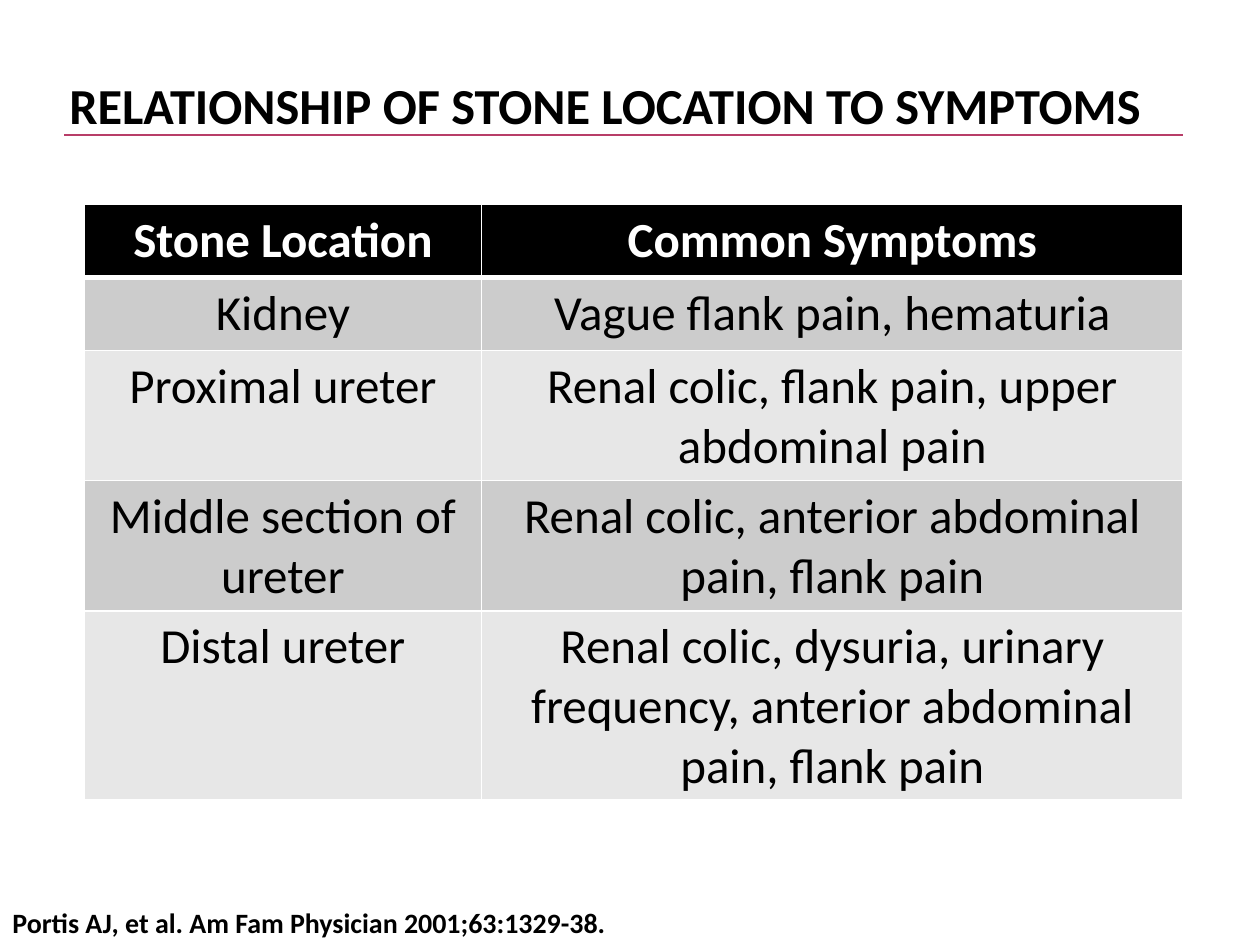
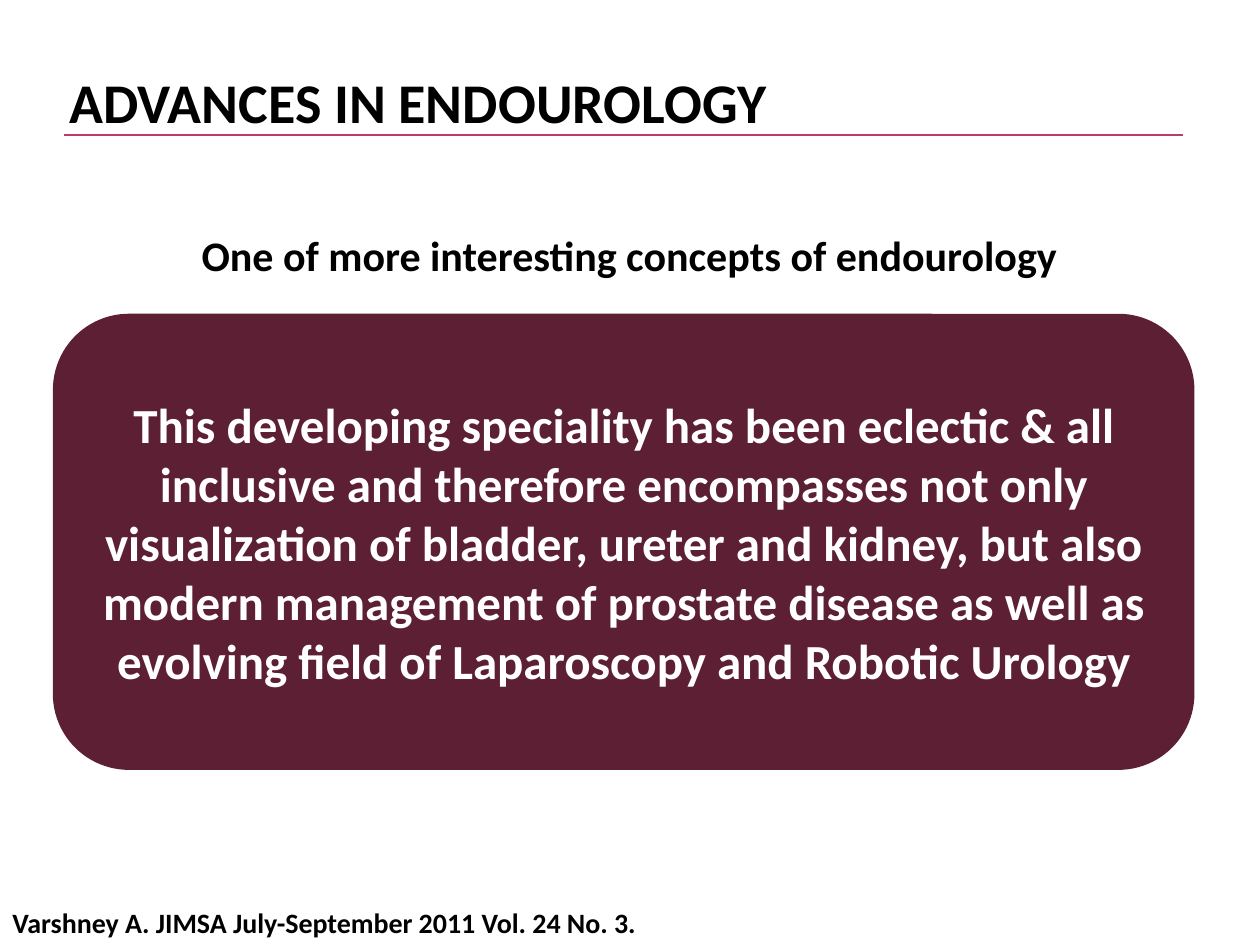
from lxml import etree
from pptx import Presentation
from pptx.dml.color import RGBColor
from pptx.enum import shapes, text
from pptx.oxml import ns
from pptx.util import Emu, Inches, Pt

FONT = "Calibri"
COLORS = {
    "ink": "000000",
    "paper": "FFFFFF",
    "rule": "B83D68",
    "panel": "5C1F34",
    "odd_row": "CCCCCC",
    "even_row": "E7E7E7",
}

SYMPTOMS = {
    "title": "RELATIONSHIP OF STONE LOCATION TO SYMPTOMS",
    "title_size": 28.8,
    "citation": "Portis AJ, et al. Am Fam Physician 2001;63:1329-38.",
    "rows": [
        ("Stone Location", "Common Symptoms"),
        ("Kidney", "Vague flank pain, hematuria"),
        ("Proximal ureter", "Renal colic, flank pain, upper abdominal pain"),
        ("Middle section of ureter", "Renal colic, anterior abdominal pain, flank pain"),
        ("Distal ureter", "Renal colic, dysuria, urinary frequency, "
                          "anterior abdominal pain, flank pain"),
    ],
}
ENDOUROLOGY = {
    "title": "ADVANCES IN ENDOUROLOGY",
    "title_size": 32,
    "citation": "Varshney A. JIMSA July-September 2011 Vol. 24 No. 3.",
    "lead": "One of more interesting concepts of endourology",
    "statement": "This developing speciality has been eclectic & all inclusive and "
                 "therefore encompasses not only visualization of bladder, ureter and "
                 "kidney, but also modern management of prostate disease as well as "
                 "evolving field of Laparoscopy and Robotic Urology",
}

GRID_COLUMNS, GRID_ROWS = 100, 75
AREAS = {
    "title": (5, 3.5, 89.1, 7.2),
    "citation": (0, 71.4, 97.2, 3.6),
    "table": (6.7, 16.2, 87.2, 29),
    "lead": (9.8, 17.7, 80.3, 5),
    "panel": (4.2, 24.9, 90.6, 36.2),
}
RULE_LEFT, RULE_RIGHT, RULE_ROW = 5.1, 93.9, 10.7
LOCATION_COLUMNS = 31.5

deck = Presentation()
deck.slide_width, deck.slide_height = Inches(10), Inches(7.5)


def across(columns):
    return Emu(round(deck.slide_width * columns / GRID_COLUMNS))


def down(rows):
    return Emu(round(deck.slide_height * rows / GRID_ROWS))


def place(area):
    left, top, width, height = AREAS[area]
    return across(left), down(top), across(width), down(height)


def color(name):
    return RGBColor.from_string(COLORS[name])


def write(frame, words, size, ink="ink", bold=True, centered=False, anchor="MIDDLE"):
    frame.word_wrap = True
    frame.vertical_anchor = getattr(text.MSO_ANCHOR, anchor)
    paragraph = frame.paragraphs[0]
    paragraph.alignment = text.PP_ALIGN.CENTER if centered else text.PP_ALIGN.LEFT
    run = paragraph.add_run()
    run.text = words
    run.font.name, run.font.size, run.font.bold = FONT, Pt(size), bold
    run.font.color.rgb = color(ink)


def write_box(slide, area, words, size, **format):
    frame = slide.shapes.add_textbox(*place(area)).text_frame
    write(frame, words, size, **format)
    return frame


def start_slide(content):
    slide = deck.slides.add_slide(deck.slide_layouts[6])
    slide.background.fill.solid()
    slide.background.fill.fore_color.rgb = color("paper")
    title = write_box(slide, "title", content["title"], content["title_size"], anchor="BOTTOM")
    title.margin_left = title.margin_right = Inches(0.05)
    title.margin_top = title.margin_bottom = 0
    rule = slide.shapes.add_connector(
        shapes.MSO_CONNECTOR.STRAIGHT,
        across(RULE_LEFT), down(RULE_ROW), across(RULE_RIGHT), down(RULE_ROW))
    rule.line.color.rgb = color("rule")
    rule.line.width = Pt(0.9)
    etree.SubElement(rule._element.spPr, ns.qn("a:effectLst"))
    write_box(slide, "citation", content["citation"], 16)
    return slide


def border(cell, bottom):
    properties = cell._tc.get_or_add_tcPr()
    widths = {"lnL": 1, "lnR": 1, "lnT": 1, "lnB": bottom}
    for position, (side, width) in enumerate(widths.items()):
        edge = etree.Element(ns.qn(f"a:{side}"), w=str(Pt(width)))
        fill = etree.SubElement(edge, ns.qn("a:solidFill"))
        etree.SubElement(fill, ns.qn("a:srgbClr"), val=COLORS["paper"])
        properties.insert(position, edge)


def build_symptoms(content):
    slide = start_slide(content)
    rows = content["rows"]
    table = slide.shapes.add_table(len(rows), len(rows[0]), *place("table")).table
    table.columns[0].width = across(LOCATION_COLUMNS)
    table.columns[1].width = across(AREAS["table"][2] - LOCATION_COLUMNS)
    for r, row in enumerate(rows):
        header = r == 0
        band = "ink" if header else ("even_row", "odd_row")[r % 2]
        for c, words in enumerate(row):
            cell = table.cell(r, c)
            cell.fill.solid()
            cell.fill.fore_color.rgb = color(band)
            write(cell.text_frame, words, 28, ink="paper" if header else "ink",
                  bold=header, centered=True, anchor="TOP")
            cell.vertical_anchor = text.MSO_ANCHOR.TOP
            border(cell, bottom=3 if header else 1)


def build_endourology(content):
    slide = start_slide(content)
    panel = slide.shapes.add_shape(shapes.MSO_SHAPE.ROUNDED_RECTANGLE, *place("panel"))
    panel.shadow.inherit = False
    panel.fill.solid()
    panel.fill.fore_color.rgb = color("panel")
    panel.line.fill.background()
    write(panel.text_frame, content["statement"], 28, ink="paper", centered=True)
    write_box(slide, "lead", content["lead"], 24, centered=True, anchor="TOP")


def main():
    build_symptoms(SYMPTOMS)
    build_endourology(ENDOUROLOGY)
    deck.save("out.pptx")


if __name__ == "__main__":
    main()
